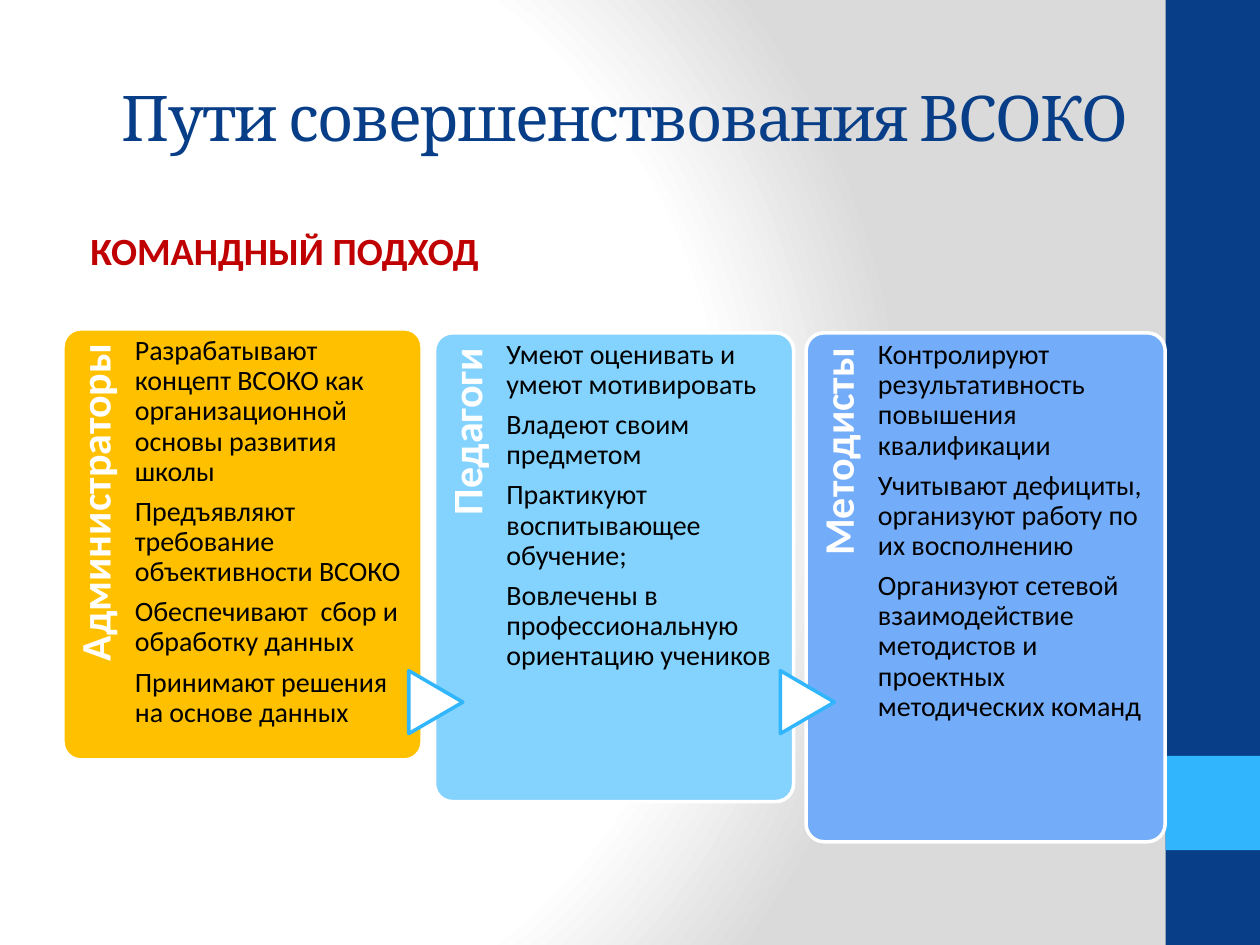
from pptx import Presentation
from pptx.dml.color import RGBColor
from pptx.enum.shapes import MSO_SHAPE
from pptx.enum.text import MSO_ANCHOR, MSO_AUTO_SIZE, PP_ALIGN
from pptx.oxml import parse_xml
from pptx.oxml.ns import nsdecls, qn
from pptx.util import Cm, Pt

RECT, ROUNDED = MSO_SHAPE.RECTANGLE, MSO_SHAPE.ROUNDED_RECTANGLE
TRIANGLE = MSO_SHAPE.FLOWCHART_EXTRACT
LEFT, RIGHT = PP_ALIGN.LEFT, PP_ALIGN.RIGHT
TOP, MIDDLE = MSO_ANCHOR.TOP, MSO_ANCHOR.MIDDLE
COLORS = {
    "white": "FFFFFF", "grey": "DADADA", "black": "000000", "navy": "073E87",
    "sky": "31B6FD", "red": "C00000", "amber": "FFC000", "pale": "83D3FE",
    "blue": "73ACF8",
}
CARD_LEFT, CARD_WIDTH, CARD_PITCH = 1.27, 7.24, 7.49
LABEL_WIDTH, LABEL_SHARE = 1.45, 0.82
ARROW_TOP, ARROW_WIDTH, ARROW_HEIGHT = 13.61, 1.27, 1.09
CARDS = [
    ("Администраторы", "amber", 6.63, 8.69, [
        "Разрабатывают концепт ВСОКО как организационной основы развития школы",
        "Предъявляют требование объективности ВСОКО",
        "Обеспечивают  сбор и обработку данных",
        "Принимают решения на основе данных",
    ]),
    ("Педагоги", "pale", 6.71, 9.45, [
        "Умеют оценивать и умеют мотивировать",
        "Владеют своим предметом",
        "Практикуют воспитывающее обучение;",
        "Вовлечены в профессиональную ориентацию учеников",
    ]),
    ("Методисты", "blue", 6.71, 10.26, [
        "Контролируют результативность повышения квалификации",
        "Учитывают дефициты, организуют работу по их восполнению",
        "Организуют сетевой взаимодействие методистов и проектных методических команд",
    ]),
]


def color(name):
    """Return a named colour."""
    return RGBColor.from_string(COLORS[name])


def place(shape, box):
    """Move a shape to a box given in centimetres."""
    shape.left, shape.top, shape.width, shape.height = map(Cm, box)


def add_span(para, text, size, tint, font="Calibri", bold=False):
    """Add one formatted run to a paragraph."""
    span = para.add_run()
    span.text = text
    span.font.size = Pt(size)
    span.font.name = font
    span.font.bold = bold
    span.font.color.rgb = color(tint)
    return span


def add_block(shapes, kind, box, fill, line=None):
    """Add a filled preset shape, outlined if a line colour is given."""
    block = shapes.add_shape(kind, *map(Cm, box))
    block.shadow.inherit = False
    block.fill.solid()
    block.fill.fore_color.rgb = color(fill)
    if line:
        block.line.color.rgb = color(line)
        block.line.width = Pt(2)
    else:
        block.line.fill.background()
    return block


def add_text(shapes, box, insets, lines, size, tint, align=LEFT, bold=False):
    """Add a wrapped text box with one paragraph for each line."""
    holder = shapes.add_textbox(*map(Cm, box))
    frame = holder.text_frame
    frame.word_wrap = True
    frame.vertical_anchor = TOP
    (frame.margin_left, frame.margin_top,
     frame.margin_right, frame.margin_bottom) = map(Cm, insets)
    for index, line in enumerate(lines):
        para = frame.add_paragraph() if index else frame.paragraphs[0]
        para.alignment = align
        para.line_spacing = 0.9
        para.space_after = Pt(size * 0.35)
        add_span(para, line, size, tint, bold=bold)
    return holder


def paint_background(page):
    """Fill the page with a round white to grey gradient."""
    page.background.fill.solid()
    solid = page.element.find(".//" + qn("a:solidFill"))
    stops = "".join(
        f'<a:gs pos="{position}"><a:srgbClr val="{COLORS[name]}"/></a:gs>'
        for position, name in ((0, "white"), (75000, "white"), (100000, "grey"))
    )
    gradient = parse_xml(
        f'<a:gradFill {nsdecls("a")} rotWithShape="1"><a:gsLst>{stops}</a:gsLst>'
        '<a:path path="circle"><a:fillToRect l="20000" t="50000" r="100000" '
        'b="50000"/></a:path></a:gradFill>'
    )
    solid.getparent().replace(solid, gradient)


def add_sidebar(page, box):
    """Add the navy strip with its square accent."""
    left, top, width, height = box
    add_block(page.shapes, RECT, box, "navy")
    add_block(page.shapes, RECT, (left, top + height * 0.8, width, width), "sky")


def fill_title(page, box):
    """Place and write the title."""
    title = page.shapes.title
    place(title, box)
    frame = title.text_frame
    frame.auto_size = MSO_AUTO_SIZE.NONE
    frame.vertical_anchor = MIDDLE
    para = frame.paragraphs[0]
    para.alignment = RIGHT
    span = add_span(para, "Пути совершенствования ВСОКО", 36, "navy", "Cambria")
    span.font._element.set("spc", "-100")


def fill_body(page, box):
    """Place the body and write its heading without a bullet."""
    body = page.placeholders[1]
    place(body, box)
    body.text_frame.auto_size = MSO_AUTO_SIZE.NONE
    para = body.text_frame.paragraphs[0]
    para.space_before = Pt(4.4)
    add_span(para, "КОМАНДНЫЙ ПОДХОД", 22, "red", bold=True)
    settings = para._p.get_or_add_pPr()
    settings.set("marL", str(Cm(0.3)))
    settings.set("indent", "0")
    settings.append(parse_xml(f'<a:buNone {nsdecls("a")}/>'))


def add_card(shapes, box, label, fill, lines, has_arrow):
    """Add a card with a vertical label, its text and an incoming arrow."""
    left, top, width, height = box
    card = add_block(shapes, ROUNDED, box, fill, "white")
    card.adjustments[0] = 0.05
    length = height * LABEL_SHARE
    label_box = (left + (LABEL_WIDTH - length) / 2,
                 top + (length - LABEL_WIDTH) / 2, length, LABEL_WIDTH)
    heading = add_text(shapes, label_box, (0, 0.23, 0.3, 0), [label],
                       24, "white", RIGHT, True)
    heading.rotation = 270
    if has_arrow:
        arrow_box = (left - 0.61, ARROW_TOP, ARROW_WIDTH, ARROW_HEIGHT)
        arrow = add_block(shapes, TRIANGLE, arrow_box, "white", "sky")
        arrow.rotation = 90
    text_box = (left + LABEL_WIDTH, top, 5.39, height)
    add_text(shapes, text_box, (0, 0.15, 0, 0), lines, 16, "black")


def main():
    """Build and save the slide."""
    deck = Presentation()
    deck.slide_width, deck.slide_height = Cm(25.4), Cm(19.05)
    page = deck.slides.add_slide(deck.slide_layouts[1])
    paint_background(page)
    add_sidebar(page, (23.5, 0, 1.9, 19.05))
    fill_title(page, (1.27, 0.76, 21.74, 3.18))
    fill_body(page, (1.27, 4.45, 21.16, 13.33))
    team = page.shapes.add_group_shape()
    for index, (label, fill, top, height, lines) in enumerate(CARDS):
        box = (CARD_LEFT + index * CARD_PITCH, top, CARD_WIDTH, height)
        add_card(team.shapes, box, label, fill, lines, index > 0)
    deck.save("out.pptx")


if __name__ == "__main__":
    main()
